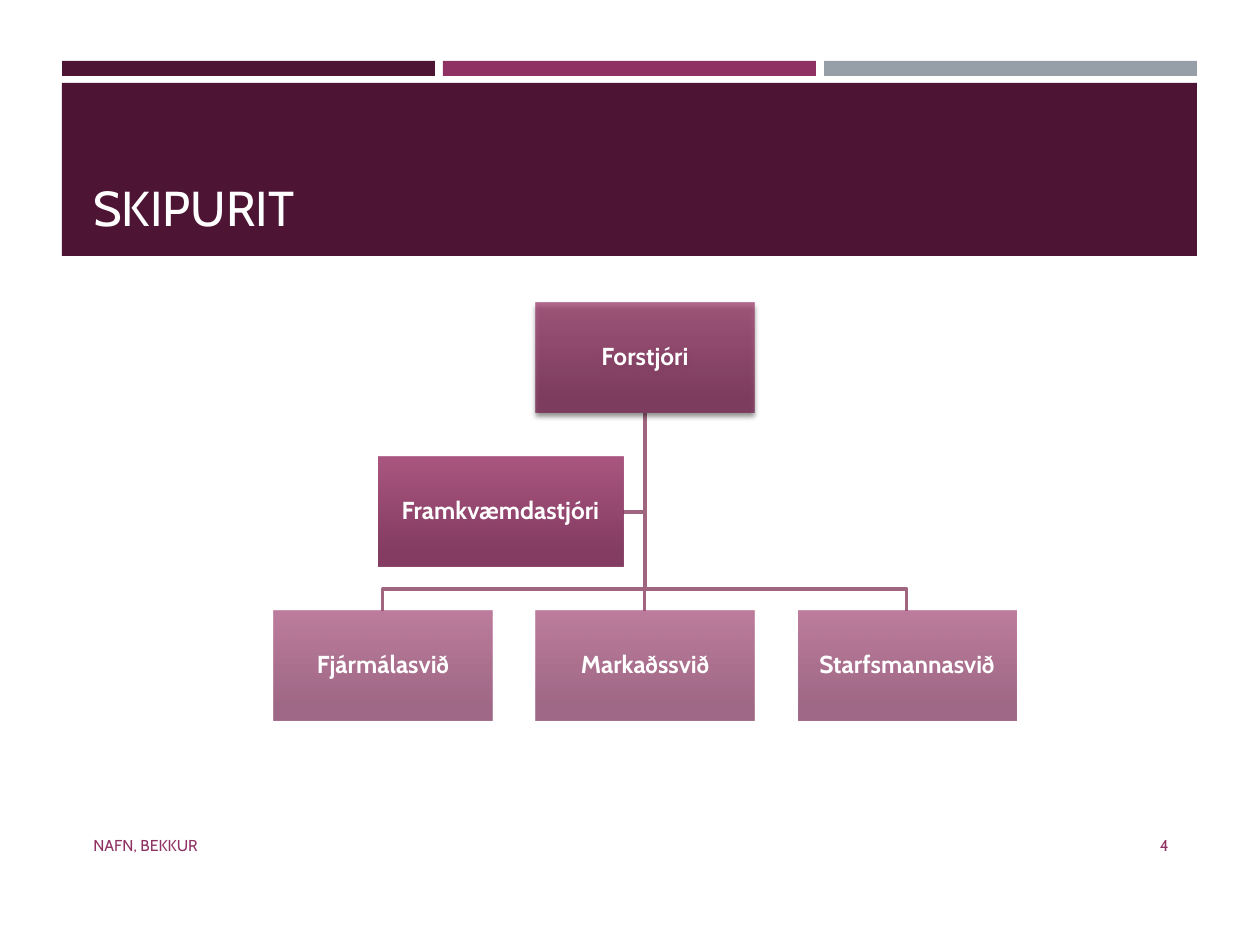
"""Build the SKIPURIT organisation chart slide."""
from dataclasses import dataclass

from lxml import etree
from pptx import Presentation
from pptx.dml.color import RGBColor
from pptx.enum.shapes import MSO_SHAPE
from pptx.enum.text import MSO_ANCHOR, PP_ALIGN
from pptx.oxml.ns import qn
from pptx.util import Pt

RECT = MSO_SHAPE.RECTANGLE
LEFT, CENTER, RIGHT = PP_ALIGN.LEFT, PP_ALIGN.CENTER, PP_ALIGN.RIGHT
MIDDLE, BOTTOM = MSO_ANCHOR.MIDDLE, MSO_ANCHOR.BOTTOM
PX = 914400 / 126


@dataclass(frozen=True)
class Theme:
    font: str = "Cabin"
    dark: str = "4D1434"
    accent: str = "903163"
    gray: str = "969FA7"
    white: str = "FFFFFF"
    line: str = "A0667F"
    box_top: str = "A24774"
    box_bottom: str = "792953"
    shadow: str = "000000"
    title: int = 28
    label: int = 14
    footer: int = 9


T = Theme()


def emu(*lengths):
    return [round(n * PX) for n in lengths]


def write(s, text, size, color, align=LEFT, anchor=MIDDLE, bold=False, inset=None, spacing=None):
    tf = s.text_frame
    tf.word_wrap = True
    tf.vertical_anchor = anchor
    if inset is not None:
        tf.margin_left, tf.margin_top, tf.margin_right, tf.margin_bottom = emu(*[inset] * 4)
    p = tf.paragraphs[0]
    p.alignment = align
    p.line_spacing = spacing
    r = p.add_run()
    r.text = text
    r.font.name, r.font.size, r.font.bold = T.font, Pt(size), bold
    r.font.color.rgb = RGBColor.from_string(color)


prs = Presentation()
prs.slide_width, prs.slide_height = emu(1260, 945)
sp = prs.slides.add_slide(prs.slide_layouts[6]).shapes

bands = [(62 + 381 * i, 61, 373, 15, color)
         for i, color in enumerate((T.dark, T.accent, T.gray))]
bands.append((62, 83, 1135, 173, T.dark))
for x, y, w, h, color in bands:
    s = sp.add_shape(RECT, *emu(x, y, w, h))
    s.shadow.inherit = False
    s.fill.solid()
    s.fill.fore_color.rgb = RGBColor.from_string(color)
    s.line.fill.background()

for text, box, size, color, align, anchor in (
    ("SKIPURIT", (81, 94, 1101, 149), T.title, T.white, LEFT, BOTTOM),
    ("NAFN, BEKKUR", (81, 820, 672, 51), T.footer, T.accent, LEFT, MIDDLE),
    ("4", (1075, 820, 106, 51), T.footer, T.accent, RIGHT, MIDDLE),
):
    write(sp.add_textbox(*emu(*box)), text, size, color, align=align, anchor=anchor)

box_w, box_h, pitch = 218, 110, 262
mid_x, top_y, aide_y, row_y = 645, 303, 457, 611
start_y, bus_y, aide_right = top_y + box_h, 589, 623
columns = [mid_x + pitch * i for i in (-1, 0, 1)]

routes = [[(mid_x, aide_y + box_h // 2), (aide_right, aide_y + box_h // 2)]]
for x in columns:
    routes.append([(mid_x, row_y)] if x == mid_x else [(mid_x, bus_y), (x, bus_y), (x, row_y)])
for points in routes:
    builder = sp.build_freeform(mid_x, start_y, scale=PX)
    builder.add_line_segments(points, close=False)
    s = builder.convert_to_shape()
    s.shadow.inherit = False
    s.fill.background()
    s.line.color.rgb = RGBColor.from_string(T.line)
    s.line.width = Pt(1.75)

boxes = [("Forstjóri", mid_x - box_w // 2, top_y, box_w, 80)]
for text, x in zip(("Fjármálasvið", "Markaðssvið", "Starfsmannasvið"), columns):
    boxes.append((text, x - box_w // 2, row_y, box_w, 70))
boxes.append(("Framkvæmdastjóri", 378, aide_y, aide_right - 378, 90))

for text, x, y, w, opacity in boxes:
    s = sp.add_shape(RECT, *emu(x, y, w, box_h))
    s.shadow.inherit = False
    s.line.fill.background()
    s.fill.gradient()
    s.fill.gradient_angle = 270
    for stop, position, color in zip(s.fill.gradient_stops, (0, 0.84), (T.box_top, T.box_bottom)):
        stop.position = position
        stop.color.rgb = RGBColor.from_string(color)
    for clr in s._element.spPr.iter(qn("a:srgbClr")):
        etree.SubElement(clr, qn("a:alpha"), val=str(opacity * 1000))
    if y == top_y:
        effects = s._element.spPr.find(qn("a:effectLst"))
        shadow = etree.SubElement(effects, qn("a:outerShdw"), blurRad=str(Pt(3)),
                                  dist=str(Pt(2)), dir="5400000", rotWithShape="0")
        clr = etree.SubElement(shadow, qn("a:srgbClr"), val=T.shadow)
        etree.SubElement(clr, qn("a:alpha"), val="55000")
    write(s, text, T.label, T.white, align=CENTER, bold=True, inset=1, spacing=0.9)

prs.save("out.pptx")
